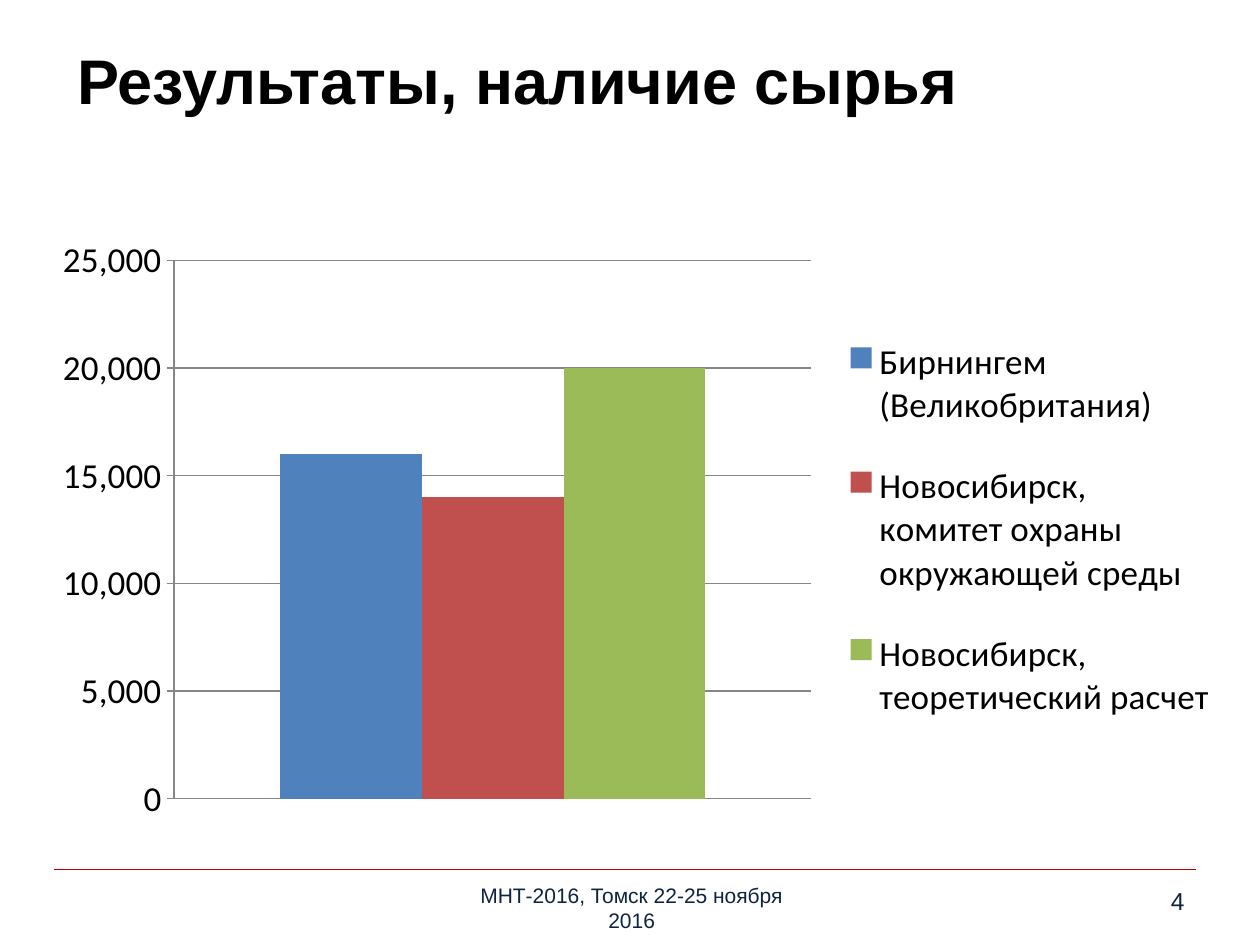
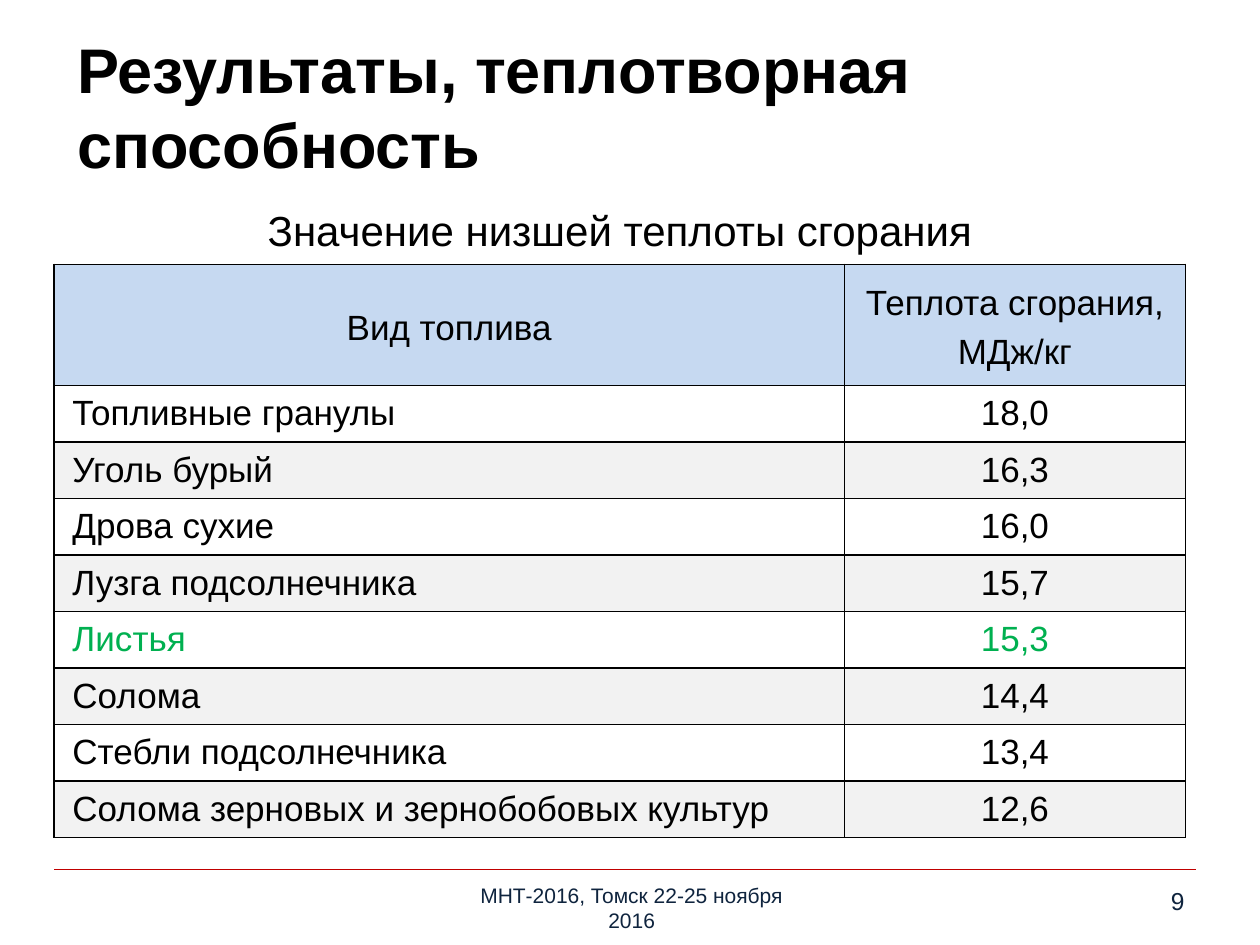
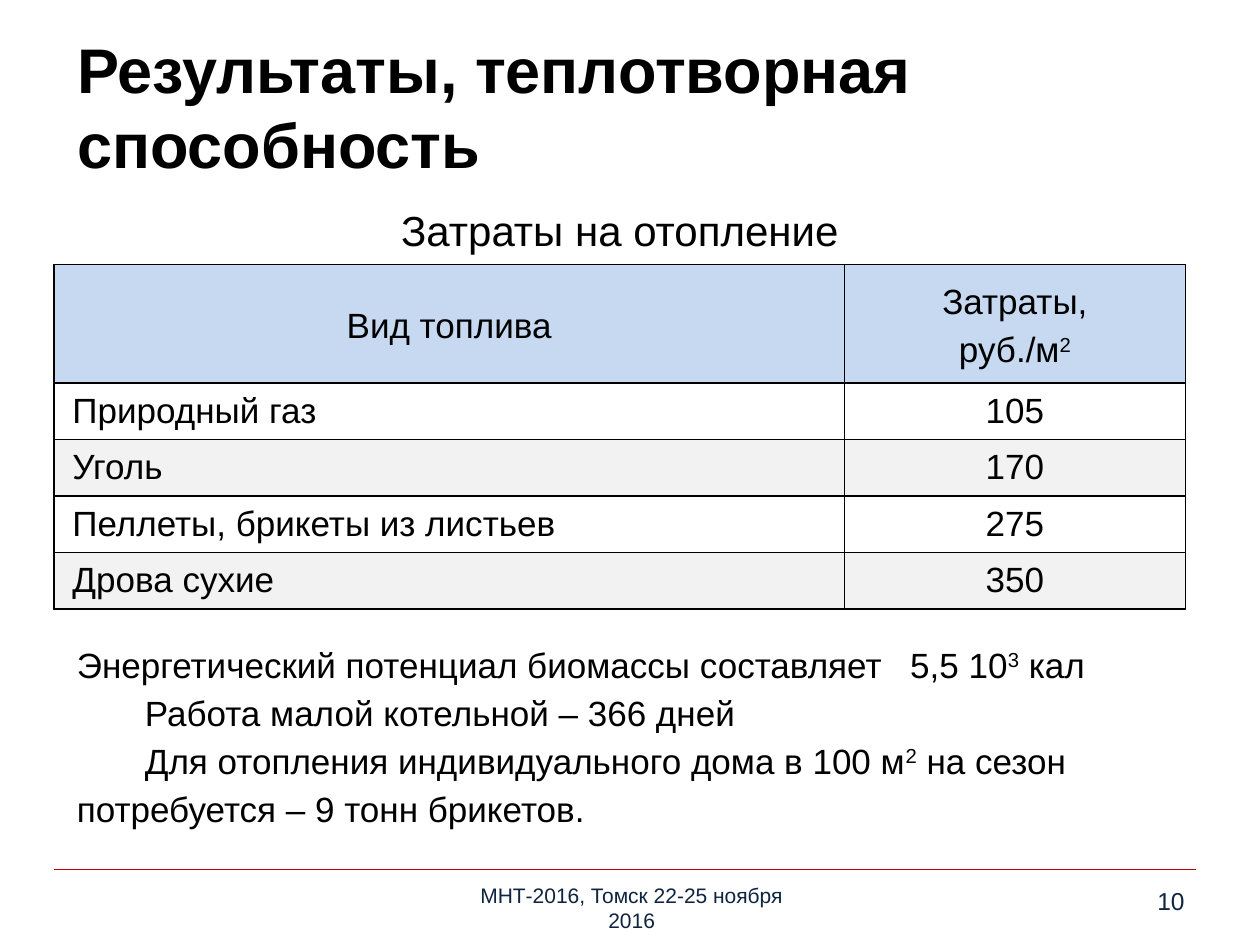
import pptx
import pptx.chart.data
import pptx.dml.color
import pptx.enum.chart
import pptx.enum.shapes
import pptx.enum.text
import pptx.oxml
import pptx.oxml.ns
import pptx.util

Cm = pptx.util.Cm
Pt = pptx.util.Pt
qn = pptx.oxml.ns.qn
ALIGN = pptx.enum.text.PP_ALIGN
MIDDLE = pptx.enum.text.MSO_ANCHOR.MIDDLE
TOP = pptx.enum.text.MSO_ANCHOR.TOP

FONT = "Arial"
COLORS = {
    "text": "000000", "footer": "0F243E", "rule": "C00000",
    "header": "C6D9F1", "band": "F2F2F2", "accent": "00B050", "axis": "868686",
}
FOOTER = ["МНТ-2016, Томск 22-25 ноября", "2016"]
HEAT_TITLE = "Результаты, теплотворная способность"

RAW_MATERIAL = [
    ("Бирнингем\n(Великобритания)", 16000, "4F81BD"),
    ("Новосибирск,\nкомитет охраны окружающей среды", 14000, "C0504D"),
    ("Новосибирск,\nтеоретический расчет", 20000, "9BBB59"),
]

# Text between ^ signs is superscript.
HEAT_VALUES = [
    ("Вид топлива", "Теплота сгорания,\nМДж/кг"),
    ("Топливные гранулы", "18,0"),
    ("Уголь бурый", "16,3"),
    ("Дрова сухие", "16,0"),
    ("Лузга подсолнечника", "15,7"),
    ("Листья", "15,3"),
    ("Солома", "14,4"),
    ("Стебли подсолнечника", "13,4"),
    ("Солома зерновых и зернобобовых культур", "12,6"),
]
HEATING_COSTS = [
    ("Вид топлива", "Затраты,\nруб./м^2^"),
    ("Природный газ", "105"),
    ("Уголь", "170"),
    ("Пеллеты, брикеты из листьев", "275"),
    ("Дрова сухие", "350"),
]
CONCLUSIONS = [
    "Энергетический потенциал биомассы составляет\t5,5 10^3^ кал",
    "Работа малой котельной – 366 дней",
    "Для отопления индивидуального дома в 100 м^2^ на сезон "
    "потребуется – 9 тонн брикетов.",
]


def rgb(value):
    return pptx.dml.color.RGBColor.from_string(value)


def write(frame, lines, size, color="text", align=ALIGN.LEFT, bold=False):
    """Fill a text frame with one paragraph per line, ^...^ as superscript."""
    for number, line in enumerate(lines):
        para = frame.paragraphs[0] if number == 0 else frame.add_paragraph()
        para.alignment = align
        for index, piece in enumerate(line.split("^")):
            if not piece:
                continue
            span = para.add_run()
            span.text = piece
            span.font.name = FONT
            span.font.size = Pt(size)
            span.font.bold = bold
            span.font.color.rgb = rgb(COLORS[color])
            if index % 2:
                span.font._element.set("baseline", "30000")


def add_text(page, place, lines, size, color="text", align=ALIGN.LEFT, anchor=MIDDLE):
    box = page.shapes.add_textbox(*map(Cm, place))
    frame = box.text_frame
    frame.word_wrap = True
    frame.vertical_anchor = anchor
    write(frame, lines, size, color, align)
    return frame


def add_page(deck, title, number, title_top=0.53):
    """Add a slide with the shared title, footer, page number and rule."""
    page = deck.slides.add_slide(deck.slide_layouts[5])
    heading = page.shapes.title
    heading.left, heading.top = Cm(1.3), Cm(title_top)
    heading.width, heading.height = Cm(24.1), Cm(3.2)
    frame = heading.text_frame
    frame.word_wrap = True
    frame.auto_size = pptx.enum.text.MSO_AUTO_SIZE.NONE
    frame.vertical_anchor = MIDDLE
    write(frame, [title], 36, bold=True)

    add_text(page, (18.21, 17.65, 5.92, 1.02), [str(number)], 14, "footer", ALIGN.RIGHT)
    add_text(page, (8.71, 17.53, 8.05, 1.52), FOOTER, 12, "footer", ALIGN.CENTER)
    rule = page.shapes.add_connector(
        pptx.enum.shapes.MSO_CONNECTOR.STRAIGHT,
        Cm(1.09), Cm(17.53), Cm(24.1), Cm(17.53))
    rule.line.color.rgb = rgb(COLORS["rule"])
    rule.line.width = Pt(0.75)
    rule._element.spPr.append(pptx.oxml.parse_xml(
        f'<a:effectLst {pptx.oxml.ns.nsdecls("a")}/>'))
    return page


def set_layout(parent, index, x, y, w, h, inner=False):
    """Place a chart part by fractions of the chart area."""
    for old in parent.findall(qn("c:layout")):
        parent.remove(old)
    target = '<c:layoutTarget val="inner"/>' if inner else ""
    parent.insert(index, pptx.oxml.parse_xml(
        f'<c:layout {pptx.oxml.ns.nsdecls("c")}><c:manualLayout>{target}'
        '<c:xMode val="edge"/><c:yMode val="edge"/>'
        f'<c:x val="{x}"/><c:y val="{y}"/><c:w val="{w}"/><c:h val="{h}"/>'
        '</c:manualLayout></c:layout>'))


def add_raw_material_chart(page):
    data = pptx.chart.data.CategoryChartData(number_format="#,##0")
    data.categories = ["1"]
    for name, value, _ in RAW_MATERIAL:
        data.add_series(name, [value])
    chart = page.shapes.add_chart(
        pptx.enum.chart.XL_CHART_TYPE.COLUMN_CLUSTERED,
        Cm(0.89), Cm(4.52), Cm(23.8), Cm(12.19), data).chart
    chart.has_title = False
    chart.font.name = "Calibri"
    chart.font.size = Pt(10)
    chart.font.color.rgb = rgb(COLORS["text"])

    plot = chart.plots[0]
    plot.gap_width = 150
    plot.overlap = 0
    plot.vary_by_categories = False
    for series, (_, _, color) in zip(plot.series, RAW_MATERIAL):
        series.format.fill.solid()
        series.format.fill.fore_color.rgb = rgb(color)

    chart.category_axis.visible = False
    axis = chart.value_axis
    axis.minimum_scale, axis.maximum_scale, axis.major_unit = 0, 25000, 5000
    axis.major_tick_mark = pptx.enum.chart.XL_TICK_MARK.OUTSIDE
    axis.has_major_gridlines = True
    for line in (axis.format.line, axis.major_gridlines.format.line):
        line.color.rgb = rgb(COLORS["axis"])
        line.width = Pt(0.75)
    axis.tick_labels.number_format = "#,##0"
    axis.tick_labels.number_format_is_linked = False
    axis.tick_labels.font.size = Pt(20)

    chart.has_legend = True
    legend = chart.legend
    legend.position = pptx.enum.chart.XL_LEGEND_POSITION.RIGHT
    legend.include_in_layout = False
    legend.font.size = Pt(20)
    set_layout(legend._element, 1, 0.67, 0.13, 0.33, 0.75)
    set_layout(chart._chartSpace.chart.plotArea, 0, 0.11, 0.06, 0.54, 0.89, inner=True)


def add_borders(cell):
    properties = cell._tc.get_or_add_tcPr()
    for side in ("lnL", "lnR", "lnT", "lnB"):
        properties.append(pptx.oxml.parse_xml(
            f'<a:{side} {pptx.oxml.ns.nsdecls("a")} w="{Pt(1)}"><a:solidFill>'
            f'<a:srgbClr val="{COLORS["text"]}"/></a:solidFill></a:{side}>'))


def add_fuel_table(page, caption, rows, header_height, highlight=None):
    add_text(page, (1.09, 3.94, 22.81, 1.4), [caption], 24, align=ALIGN.CENTER)
    widths, row_height = (15.93, 6.88), 1.14
    height = header_height + row_height * (len(rows) - 1)
    table = page.shapes.add_table(
        len(rows), len(widths), Cm(1.09), Cm(5.33), Cm(sum(widths)), Cm(height)).table
    for column, width in zip(table.columns, widths):
        column.width = Cm(width)
    for r, values in enumerate(rows):
        table.rows[r].height = Cm(row_height if r else header_height)
        for c, value in enumerate(values):
            cell = table.cell(r, c)
            is_name = r > 0 and c == 0
            add_borders(cell)
            cell.margin_top = cell.margin_bottom = 0
            cell.margin_left = Cm(0.37 if is_name else 0.18)
            cell.margin_right = Cm(0.18)
            cell.vertical_anchor = MIDDLE
            write(cell.text_frame, value.split("\n"), 20,
                  "accent" if values[0] == highlight else "text",
                  ALIGN.JUSTIFY if is_name else ALIGN.CENTER)
            if r == 0:
                for number, para in enumerate(cell.text_frame.paragraphs):
                    para.line_spacing = 1.15
                    para.space_before = Pt(1 if number else 0)
                    para.space_after = Pt(1)
            if r and r % 2:
                cell.fill.background()
            else:
                cell.fill.solid()
                cell.fill.fore_color.rgb = rgb(COLORS["band" if r else "header"])


def add_conclusions(page):
    frame = add_text(page, (1.3, 12.73, 24.1, 4.39), CONCLUSIONS, 20, anchor=TOP)
    for number, para in enumerate(frame.paragraphs):
        para.line_spacing = 1.14
        properties = para._p.get_or_add_pPr()
        if number:
            properties.set("indent", str(Cm(1.37)))
        else:
            properties.append(pptx.oxml.parse_xml(
                f'<a:tabLst {pptx.oxml.ns.nsdecls("a")}>'
                f'<a:tab pos="{Cm(16.8)}" algn="l"/></a:tabLst>'))


def main():
    deck = pptx.Presentation()
    deck.slide_width, deck.slide_height = Cm(25.4), Cm(19.05)

    add_raw_material_chart(add_page(deck, "Результаты, наличие сырья", 4, title_top=0))

    page = add_page(deck, HEAT_TITLE, 9)
    add_fuel_table(page, "Значение низшей теплоты сгорания", HEAT_VALUES, 2.44, "Листья")

    page = add_page(deck, HEAT_TITLE, 10)
    add_conclusions(page)
    add_fuel_table(page, "Затраты на отопление", HEATING_COSTS, 2.39)

    deck.save("out.pptx")


if __name__ == "__main__":
    main()
